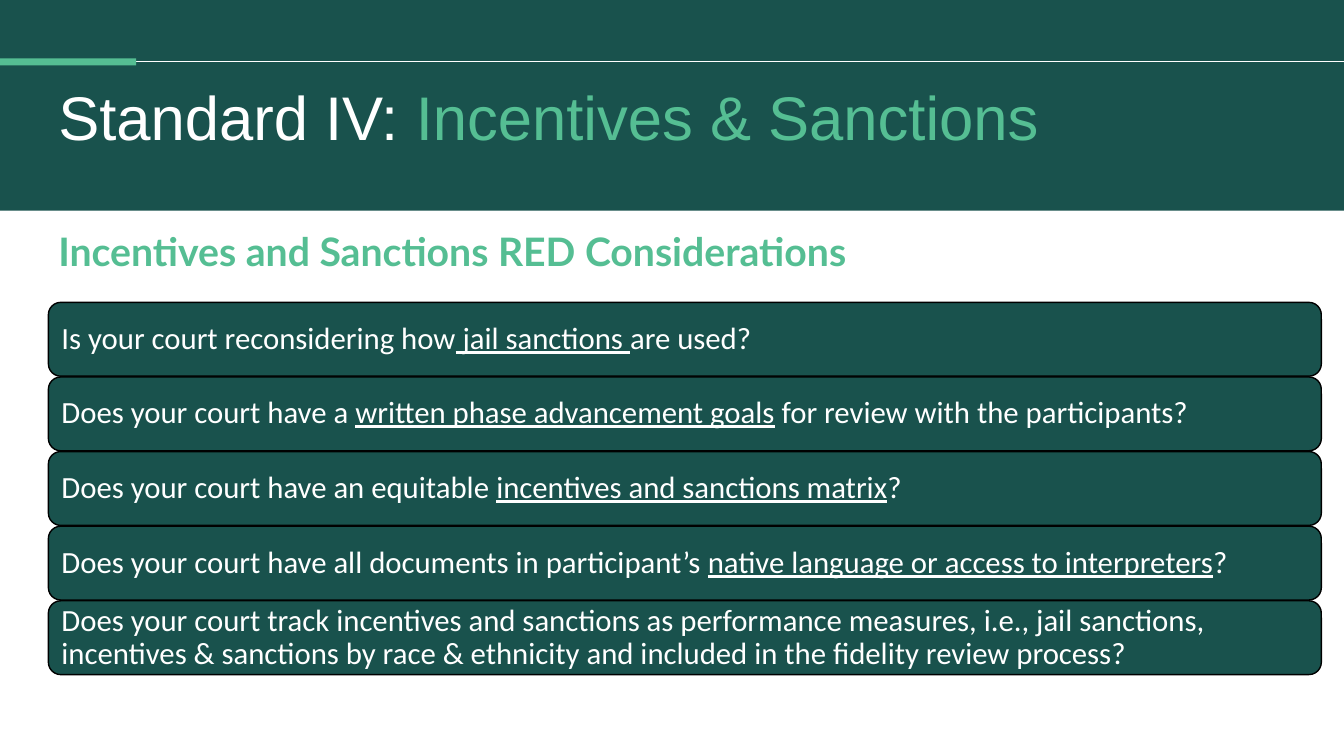
from lxml.etree import SubElement
from pptx import Presentation
from pptx.dml.color import RGBColor
from pptx.enum.shapes import MSO_CONNECTOR, MSO_SHAPE
from pptx.enum.text import MSO_ANCHOR, PP_ALIGN
from pptx.oxml.ns import qn
from pptx.util import Cm, Pt

COLORS = {"pine": "19524D", "mint": "55BE93", "white": "FFFFFF", "black": "000000"}

TITLE = [("Standard IV: ", "white"), ("Incentives & Sanctions", "mint")]
HEADING = "Incentives and Sanctions RED Considerations"
# Each question: plain start, underlined part, plain end
QUESTIONS = [
    ("Is your court reconsidering how", " jail sanctions ", "are used?"),
    ("Does your court have a ", "written phase advancement goals",
     " for review with the participants?"),
    ("Does your court have an equitable ", "incentives and sanctions matrix", "?"),
    ("Does your court have all documents in participant’s ",
     "native language or access to interpreters", "?"),
    ("Does your court track incentives and sanctions as performance measures, "
     "i.e., jail sanctions, incentives & sanctions by race & ethnicity and "
     "included in the fidelity review process?", "", ""),
]

WIDTH, HEIGHT = 33.87, 19.05
LEFT = 1.22
RULE_Y = 1.55
ROW_TOP, ROW_STEP = 7.62, 1.88
ROW_WIDTH, ROW_HEIGHT = 32.08, 1.86


def rgb(name):
    return RGBColor.from_string(COLORS[name])


def write(frame, runs, font, size, bold=False, anchor=MSO_ANCHOR.TOP,
          inset=(0.25, 0.13)):
    """Fill a frame with one paragraph of (text, colour, underline) runs."""
    frame.word_wrap = True
    frame.vertical_anchor = anchor
    frame.margin_left = frame.margin_right = Cm(inset[0])
    frame.margin_top = frame.margin_bottom = Cm(inset[1])
    para = frame.paragraphs[0]
    para.alignment = PP_ALIGN.LEFT
    para.line_spacing = 0.9
    for text, color, under in runs:
        run = para.add_run()
        run.text = text
        run.font.name = font
        run.font.size = Pt(size)
        run.font.bold = bold
        run.font.underline = under
        run.font.color.rgb = rgb(color)


def block(slide, kind, box, fill, line=None):
    shape = slide.shapes.add_shape(kind, *map(Cm, box))
    shape.shadow.inherit = False
    shape.fill.solid()
    shape.fill.fore_color.rgb = rgb(fill)
    if line:
        shape.line.color.rgb = rgb(line)
        shape.line.width = Pt(1)
    else:
        shape.line.fill.background()
    return shape


def label(slide, box, runs, **style):
    frame = slide.shapes.add_textbox(*map(Cm, box)).text_frame
    write(frame, runs, **style)


def banner(slide):
    block(slide, MSO_SHAPE.RECTANGLE, (0, 0, WIDTH, 5.31), "pine")
    rule = slide.shapes.add_connector(
        MSO_CONNECTOR.STRAIGHT, Cm(0), Cm(RULE_Y), Cm(WIDTH), Cm(RULE_Y))
    rule.line.color.rgb = rgb("white")
    rule.line.width = Pt(0.5)
    SubElement(rule._element.spPr, qn("a:effectLst"))
    block(slide, MSO_SHAPE.RECTANGLE, (0, RULE_Y - 0.08, 3.43, 0.18), "mint")
    label(slide, (LEFT, 2.06, 29, 2.36),
          [(text, color, False) for text, color in TITLE], font="Arial", size=44)


def rows(slide):
    for index, parts in enumerate(QUESTIONS):
        top = ROW_TOP + index * ROW_STEP
        row = block(slide, MSO_SHAPE.ROUNDED_RECTANGLE,
                    (LEFT, top, ROW_WIDTH, ROW_HEIGHT), "pine", "black")
        runs = [(text, "white", place == 1)
                for place, text in enumerate(parts) if text]
        write(row.text_frame, runs, font="Calibri", size=22,
              anchor=MSO_ANCHOR.MIDDLE, inset=(0.24, 0))


def main():
    deck = Presentation()
    deck.slide_width, deck.slide_height = Cm(WIDTH), Cm(HEIGHT)
    slide = deck.slides.add_slide(deck.slide_layouts[6])
    banner(slide)
    label(slide, (LEFT, 5.74, 28.3, 1.6), [(HEADING, "mint", False)],
          font="Lato", size=28, bold=True)
    rows(slide)
    deck.save("out.pptx")


if __name__ == "__main__":
    main()
